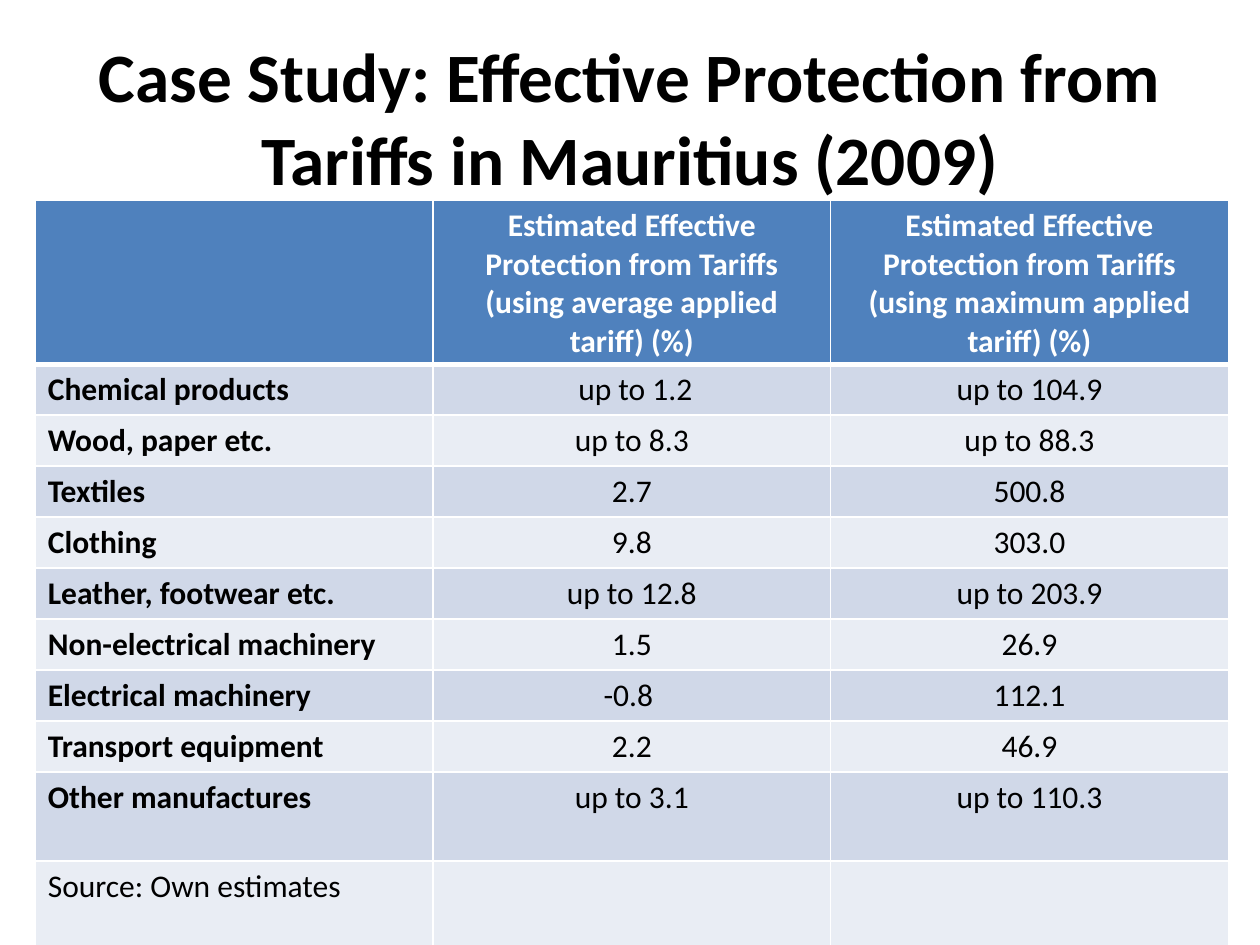
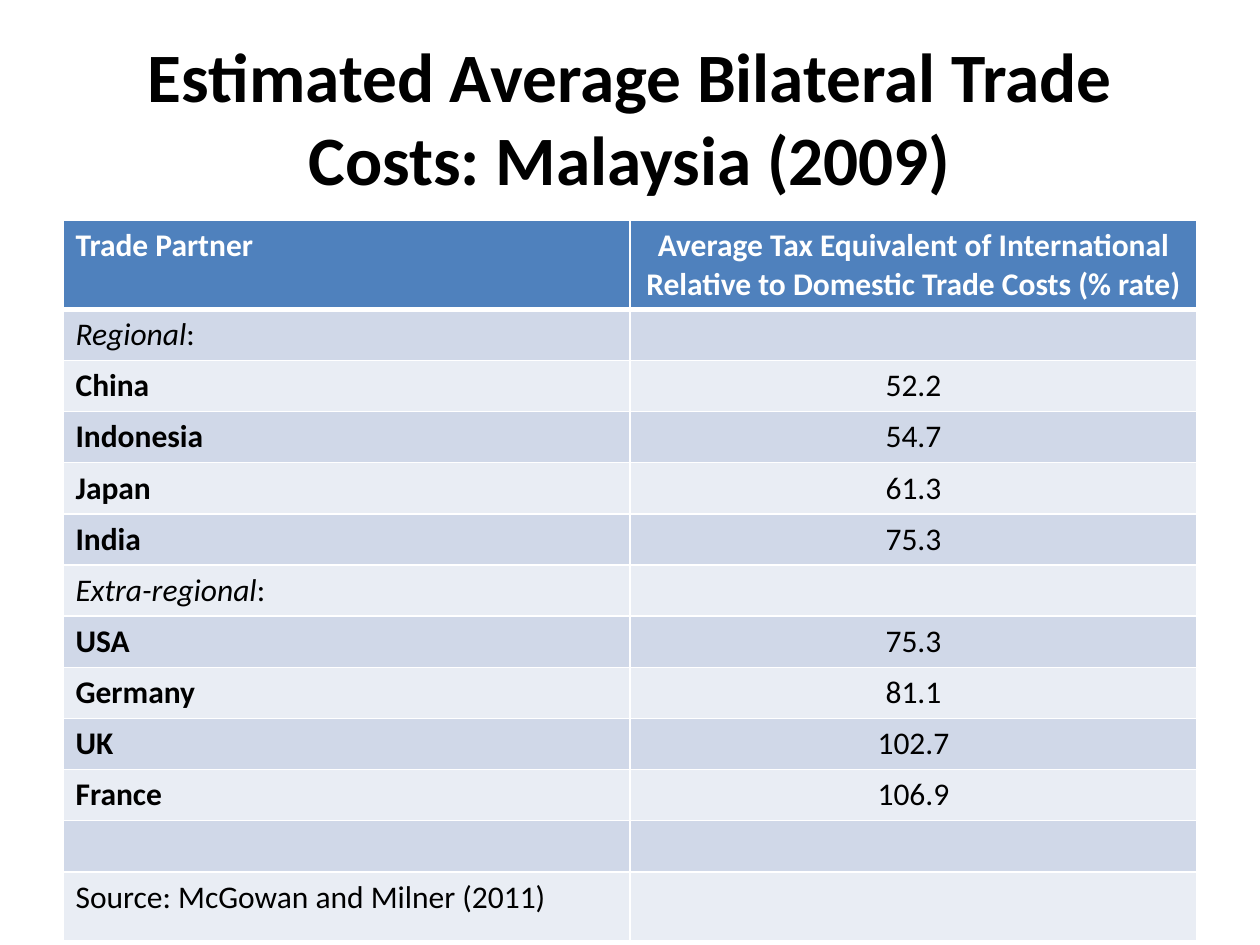
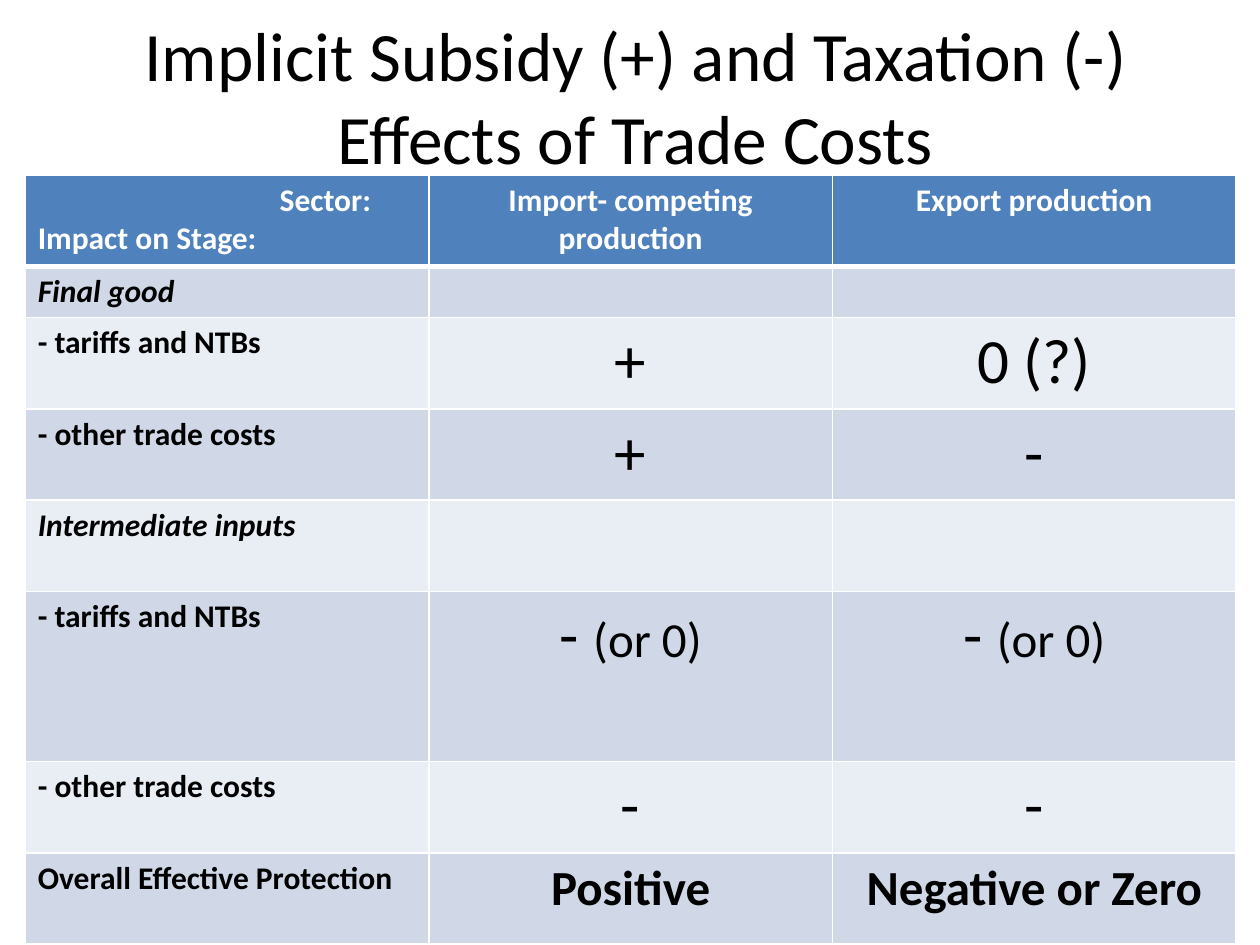
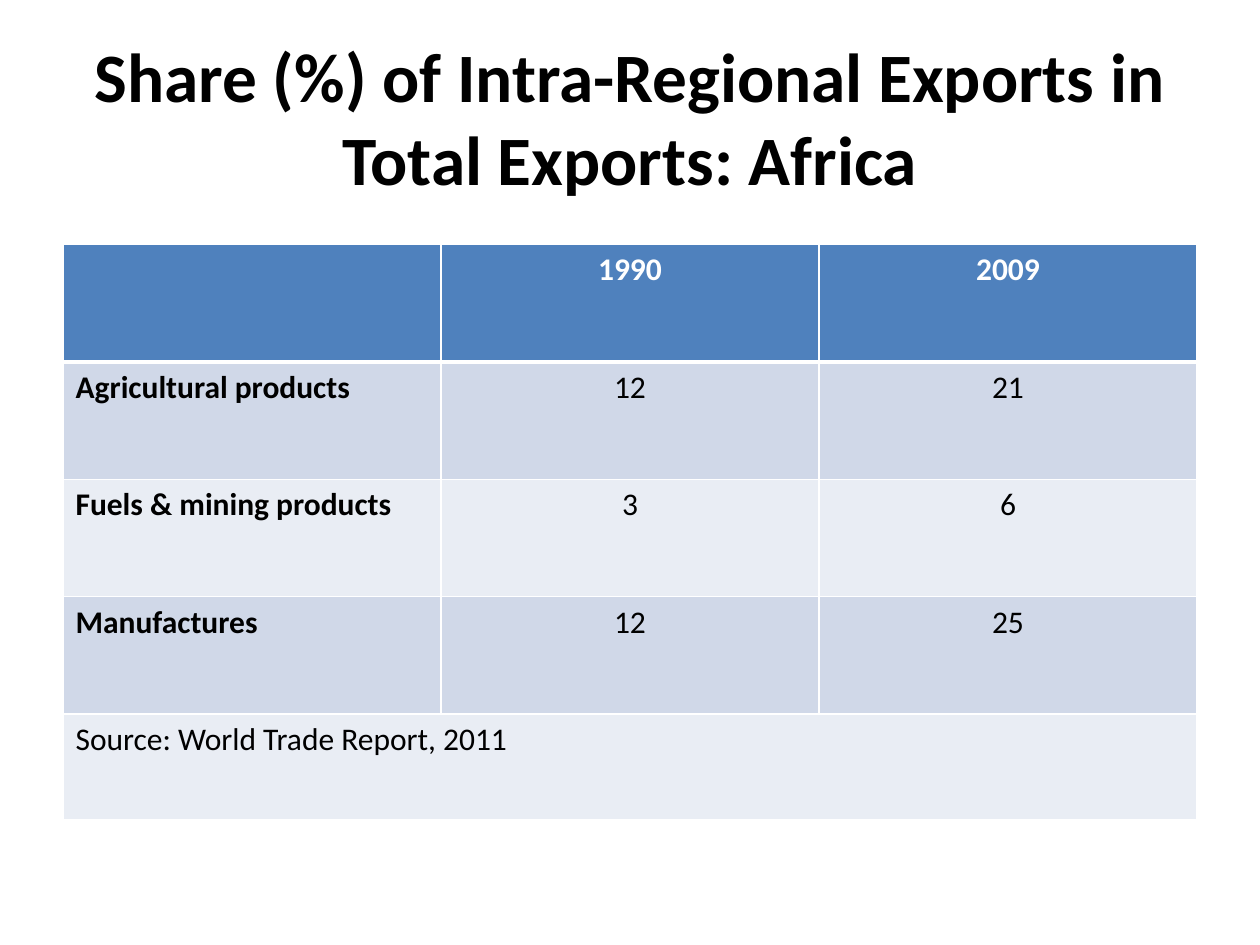
"""Build four slides of trade cost tables."""
from typing import Any, NamedTuple

from lxml.etree import SubElement as Sub
from pptx import Presentation
from pptx.dml.color import RGBColor as Rgb
from pptx.enum.text import MSO_ANCHOR as Anchor, PP_ALIGN as Align
from pptx.oxml.ns import qn
from pptx.util import Inches, Pt

COLS, ROWS = 100, 75
UNIT = Inches(10) // COLS
BLACK, WHITE, HEAD = "000000", "FFFFFF", "4F81BD"
BANDS = ("E9EDF4", "D0D8E8")
FACE = "Calibri"
THIN, THICK = 1, 3


class Box(NamedTuple):
    left: float
    top: float
    width: float
    height: float


class Run(NamedTuple):
    text: str
    size: float = 18
    bold: bool = False
    italic: bool = False
    indent: float = 0
    fresh: bool = False


Cell = str | tuple[Run, ...]


class Page(NamedTuple):
    title: str
    table: Box
    rows: list[float]
    cells: list[list[Cell]]
    spot: Box = Box(5, 3, 90, 12.5)
    bold: bool = True
    span: bool = False


def grid(*vals: float) -> list[int]:
    """Turn grid steps into slide lengths."""
    return [round(val * UNIT) for val in vals]


def tint(code: str) -> Rgb:
    """Give the colour for a hex string."""
    return Rgb.from_string(code)


def put(item: Any, form: dict[str, Any]) -> None:
    """Set each format value on an item."""
    for key, val in form.items():
        setattr(item, key, val)


def write(frame: Any, runs: tuple[Run, ...], ink: str, align: Align) -> None:
    """Fill a text frame with styled runs."""
    para = frame.paragraphs[0]
    para.alignment = align
    for run in runs:
        if run.fresh:
            para = frame.add_paragraph()
            para.alignment = align
        if run.indent:
            para._p.get_or_add_pPr().set("marL", str(grid(run.indent)[0]))
        part = para.add_run()
        part.text = run.text
        put(part.font, {"name": FACE, "size": Pt(run.size),
                        "bold": run.bold, "italic": run.italic})
        part.font.color.rgb = tint(ink)


def edge(cell: Any, row: int) -> None:
    """Draw the white rules round a cell."""
    wide = {"L": THIN, "R": THIN, "T": THICK if row == 1 else THIN,
            "B": THICK if row == 0 else THIN}
    props = cell._tc.get_or_add_tcPr()
    for side, size in wide.items():
        line = Sub(props, qn(f"a:ln{side}"), w=str(Pt(size)))
        Sub(Sub(line, qn("a:solidFill")), qn("a:srgbClr"), val=WHITE)


def fill(cell: Any, data: Cell, row: int, col: int) -> None:
    """Style one table cell and write its text."""
    edge(cell, row)
    cell.fill.solid()
    cell.fill.fore_color.rgb = tint(BANDS[row % 2] if row else HEAD)
    runs = (Run(data, bold=not (row and col)),) if isinstance(data, str) else data
    if data:
        write(cell.text_frame, runs, BLACK if row else WHITE,
              Align.CENTER if col else Align.LEFT)


def chart(slide: Any, page: Page) -> None:
    """Add the table of a page."""
    wide = len(page.cells[0])
    table = slide.shapes.add_table(len(page.rows), wide, *grid(*page.table)).table
    put(table, {"first_row": False, "horz_banding": False})
    for col in table.columns:
        col.width = grid(page.table.width / wide)[0]
    for row, data in enumerate(page.cells):
        table.rows[row].height = grid(page.rows[row])[0]
        for col, text in enumerate(data):
            fill(table.cell(row, col), text, row, col)
    if page.span:
        last = len(page.rows) - 1
        table.cell(last, 0).merge(table.cell(last, wide - 1))


def draw(deck: Any, page: Page) -> None:
    """Add one slide with its title and table."""
    slide = deck.slides.add_slide(deck.slide_layouts[6])
    frame = slide.shapes.add_textbox(*grid(*page.spot)).text_frame
    put(frame, {"word_wrap": True, "vertical_anchor": Anchor.MIDDLE})
    write(frame, (Run(page.title, 39.6, page.bold),), BLACK, Align.CENTER)
    chart(slide, page)


def plain(text: str) -> Cell:
    """Give a first-column note in regular type."""
    return (Run(text),)


def group(text: str) -> Cell:
    """Give an italic group name with a colon."""
    return (Run(text, italic=True), Run(":"))


def stage(text: str) -> Cell:
    """Give a bold italic stage name."""
    return (Run(text, bold=True, italic=True),)


def mark(text: str, note: str = "") -> Cell:
    """Give a large sign with an optional note."""
    return (Run(text, 36), Run(note, 28)) if note else (Run(text, 36),)


def total(text: str) -> Cell:
    """Give a bold overall result."""
    return (Run(text, 28, True),)


PAGES = [
    Page(
        "Case Study: Effective Protection from Tariffs in Mauritius (2009)",
        Box(2.8, 15.9, 94.7, 59.1), [12.9] + [4.05] * 8 + [7.05] * 2,
        [["", *(f"Estimated Effective Protection from Tariffs "
                f"(using {kind} applied tariff) (%)"
                for kind in ("average", "maximum"))],
         ["Chemical products", " up to 1.2", "up to 104.9"],
         ["Wood, paper etc.", "up to 8.3", "up to 88.3"],
         ["Textiles", "2.7", "500.8"],
         ["Clothing", "9.8", "303.0"],
         ["Leather, footwear etc.", "up to 12.8", "up to 203.9"],
         ["Non-electrical machinery", "1.5", "26.9"],
         ["Electrical machinery", "-0.8 ", "112.1"],
         ["Transport equipment", "2.2", "46.9"],
         ["Other manufactures", "up to 3.1", "up to 110.3"],
         [plain("Source: Own estimates"), "", ""]]),
    Page(
        "Estimated Average Bilateral Trade Costs: Malaysia (2009)",
        Box(5, 17.5, 90, 57.1), [7.05] + [4.06] * 11 + [5.5],
        [["Trade Partner", "Average Tax Equivalent of International "
          "Relative to Domestic Trade Costs (% rate)"],
         [group("Regional"), ""],
         ["China", "52.2"],
         ["Indonesia", "54.7"],
         ["Japan", "61.3"],
         ["India", "75.3"],
         [group("Extra-regional"), ""],
         ["USA", "75.3"],
         ["Germany", "81.1"],
         ["UK", "102.7"],
         ["France", "106.9"],
         ["", ""],
         [plain("Source: McGowan and Milner (2011)"), ""]]),
    Page(
        "Implicit Subsidy (+) and Taxation (-) Effects of Trade Costs",
        Box(2, 13.9, 96.1, 61.1),
        [7.25, 4.05, 7.25, 7.25, 7.25, 13.5, 7.25, 7.25],
        [[(Run("Sector:", bold=True, indent=19.2),
           Run("Impact on Stage:", bold=True, fresh=True)),
          "Import- competing production", "Export production"],
         [stage("Final good"), "", ""],
         ["- tariffs and NTBs", mark("+"), mark("0 (?)")],
         ["- other trade costs", mark("+"), mark("-")],
         [stage("Intermediate inputs"), "", ""],
         ["- tariffs and NTBs", *[mark("- ", "(or 0)")] * 2],
         ["- other trade costs", *[mark("-")] * 2],
         ["Overall Effective Protection", total("Positive"),
          total("Negative or Zero")]],
        spot=Box(5.9, 1.3, 89.1, 12.6), bold=False),
    Page(
        "Share (%) of Intra-Regional Exports in Total Exports: Africa",
        Box(5, 19.4, 90, 45.7), [9.32] * 4 + [8.4],
        [["", "1990", "2009"],
         ["Agricultural products", "12", "21"],
         ["Fuels & mining products", "3", "6"],
         ["Manufactures", "12", "25"],
         [plain("Source: World Trade Report, 2011"), "", ""]],
        span=True),
]


def main() -> None:
    """Build and save the deck."""
    deck = Presentation()
    put(deck, {"slide_width": COLS * UNIT, "slide_height": ROWS * UNIT})
    for page in PAGES:
        draw(deck, page)
    deck.save("out.pptx")


if __name__ == "__main__":
    main()
